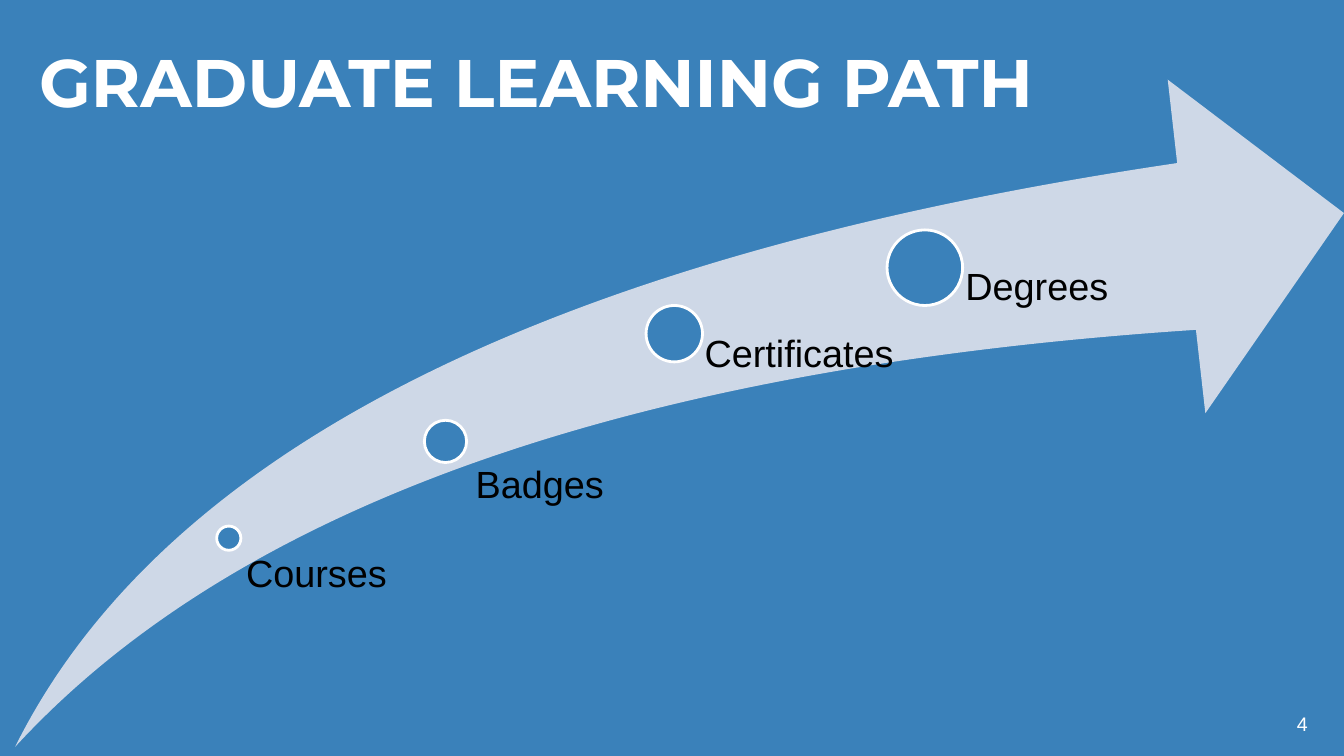
import pptx
import pptx.dml.color
import pptx.enum.shapes
import pptx.enum.text
import pptx.util

Pt = pptx.util.Pt
Kind = pptx.enum.shapes.MSO_SHAPE
Side = pptx.enum.text.PP_ALIGN
Anchor = pptx.enum.text.MSO_ANCHOR
HUES = {"blue": "3A81BA", "pale": "CED8E7", "white": "FFFFFF", "black": "000000"}


class Deck:
    """Hold the colours and the current slide, and draw each kind of element."""

    def __init__(self, hues):
        self.hues = hues
        self.prs = pptx.Presentation()
        self.prs.slide_width, self.prs.slide_height = Pt(960), Pt(540)
        self.slide = self.prs.slides.add_slide(self.prs.slide_layouts[6])

    def hue(self, name):
        return pptx.dml.color.RGBColor.from_string(self.hues[name])

    def back(self, name):
        fill = self.slide.background.fill
        fill.solid()
        fill.fore_color.rgb = self.hue(name)

    def shape(self, kind, box, fill, line=None):
        shape = self.slide.shapes.add_shape(kind, *map(Pt, box))
        shape.shadow.inherit = False
        shape.fill.solid()
        shape.fill.fore_color.rgb = self.hue(fill)
        if line:
            shape.line.color.rgb = self.hue(line)
            shape.line.width = Pt(2)
        else:
            shape.line.fill.background()
        return shape

    def swoosh(self, box, fill):
        arrow = self.shape(Kind.SWOOSH_ARROW, box, fill)
        arrow.adjustments[0] = arrow.adjustments[1] = 0.25

    def text(self, words, box, size, hue, pad, font="Arial", bold=False,
             side=Side.LEFT, anchor=Anchor.TOP, space=1.0):
        frame = self.slide.shapes.add_textbox(*map(Pt, box)).text_frame
        frame.word_wrap = True
        frame.vertical_anchor = anchor
        frame.margin_left, frame.margin_top, frame.margin_right, frame.margin_bottom = map(Pt, pad)
        frame.text = words
        par = frame.paragraphs[0]
        par.alignment = side
        par.line_spacing = space
        face = par.runs[0].font
        face.name, face.size, face.bold = font, Pt(size), bold
        face.color.rgb = self.hue(hue)

    def step(self, words, dot, box, pad):
        left, top, size = dot
        self.shape(Kind.OVAL, (left, top, size, size), "blue", "white")
        self.text(words, box, 27, "black", (pad, 0, 0, 0), space=0.9)


def main():
    deck = Deck(HUES)
    deck.back("blue")
    deck.swoosh((10.8, 56.9, 949.2, 476.6), "pale")
    steps = [
        ("Courses", (154.8, 375.8, 17.3), (166.3, 396, 130.3, 113.8), 9.4),
        ("Badges", (303.1, 300.2, 30.2), (324, 332.6, 160, 152.6), 15.8),
        ("Certificates", (461.5, 218.2, 40.3), (481.7, 239, 160, 294.5), 21.6),
        ("Degrees", (633.6, 164.2, 54), (661, 191.5, 160, 342), 28.6),
    ]
    for step in steps:
        deck.step(*step)
    deck.text("GRADUATE LEARNING PATH", (20.9, 21.6, 832.3, 121.7), 48, "white",
              (7.2, 7.2, 7.2, 7.2), font="Montserrat", bold=True)
    deck.text("4", (909.4, 502.6, 41.8, 28.8), 14, "white", (7.2, 3.6, 7.2, 3.6),
              side=Side.CENTER, anchor=Anchor.MIDDLE)
    deck.prs.save("out.pptx")


if __name__ == "__main__":
    main()
